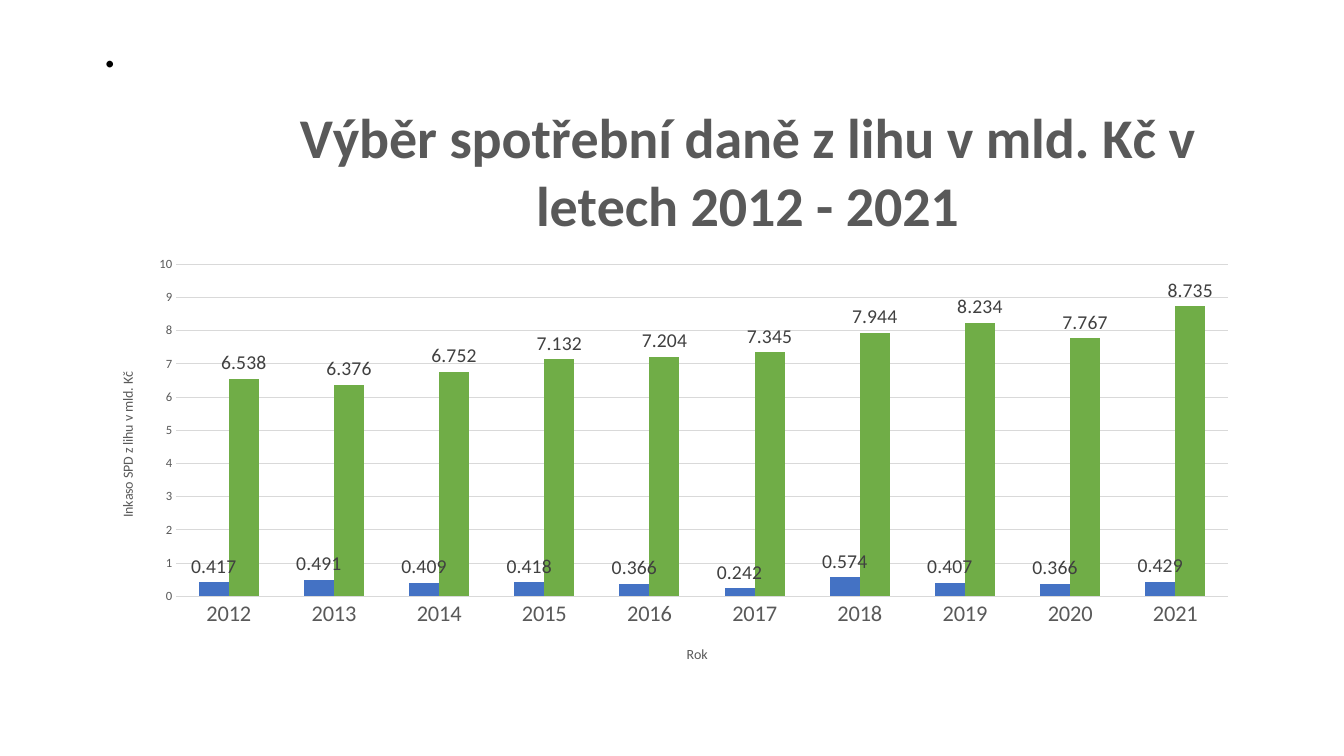
from lxml import etree
from pptx import Presentation
from pptx.chart.data import CategoryChartData
from pptx.dml.color import RGBColor
from pptx.enum.chart import XL_CHART_TYPE, XL_LABEL_POSITION, XL_TICK_MARK
from pptx.enum.text import MSO_ANCHOR, MSO_AUTO_SIZE, PP_ALIGN
from pptx.oxml.ns import qn
from pptx.util import Inches, Pt

BLACK = RGBColor(0x00, 0x00, 0x00)
TEXT_GREY = RGBColor(0x59, 0x59, 0x59)
LABEL_GREY = RGBColor(0x40, 0x40, 0x40)
GRID_GREY = RGBColor(0xD9, 0xD9, 0xD9)
BLUE = RGBColor(0x44, 0x72, 0xC4)
GREEN = RGBColor(0x70, 0xAD, 0x47)
FONT = "Calibri"

YEARS = [str(year) for year in range(2012, 2022)]
SERIES = [
    ("Series 1", BLUE,
     [0.417, 0.491, 0.409, 0.418, 0.366, 0.242, 0.574, 0.407, 0.366, 0.429]),
    ("Series 2", GREEN,
     [6.538, 6.376, 6.752, 7.132, 7.204, 7.345, 7.944, 8.234, 7.767, 8.735]),
]


def set_font(font, size, color, bold=False):
    font.name = FONT
    font.size = Pt(size)
    font.bold = bold
    font.color.rgb = color


def place(element, successors, **settings):
    """Give a chart part a manual layout, in fractions of the chart area."""
    for old in element.findall(qn("c:layout")):
        element.remove(old)
    layout = etree.Element(qn("c:layout"))
    manual = etree.SubElement(layout, qn("c:manualLayout"))
    for name, value in settings.items():
        etree.SubElement(manual, qn(f"c:{name}")).set("val", str(value))
    element.insert_element_before(layout, *successors)


deck = Presentation()
deck.slide_width = Inches(13.33)
deck.slide_height = Inches(7.5)
page = deck.slides.add_slide(deck.slide_layouts[5])

# Slide title
title = page.shapes.title
title.left, title.top = Inches(0.92), Inches(0.4)
title.width, title.height = Inches(11.5), Inches(0.19)
frame = title.text_frame
frame.text = "."
frame.auto_size = MSO_AUTO_SIZE.NONE
frame.vertical_anchor = MSO_ANCHOR.MIDDLE
para = frame.paragraphs[0]
para.alignment = PP_ALIGN.LEFT
para.line_spacing = 0.9
set_font(para.font, 39.6, BLACK)

# Column chart
data = CategoryChartData(number_format="General")
data.categories = YEARS
for name, color, values in SERIES:
    data.add_series(name, values)
chart = page.shapes.add_chart(
    XL_CHART_TYPE.COLUMN_CLUSTERED,
    Inches(0.92), Inches(0.58), Inches(11.5), Inches(6.17), data).chart
set_font(chart.font, 10, BLACK)
chart.has_legend = False
plot = chart.plots[0]
plot.gap_width = 150
plot.overlap = 0
plot.vary_by_categories = False

for series, (name, color, values) in zip(plot.series, SERIES):
    series.format.fill.solid()
    series.format.fill.fore_color.rgb = color
    labels = series.data_labels
    labels.show_value = True
    labels.position = XL_LABEL_POSITION.OUTSIDE_END
    set_font(labels.font, 14, LABEL_GREY)

# Axes
years, amounts = chart.category_axis, chart.value_axis
for axis, size in ((years, 16), (amounts, 9)):
    axis.major_tick_mark = axis.minor_tick_mark = XL_TICK_MARK.NONE
    set_font(axis.tick_labels.font, size, TEXT_GREY)
    axis.format.line.fill.background()
amounts.minimum_scale, amounts.maximum_scale, amounts.major_unit = 0, 10, 1
amounts.has_major_gridlines = True
grid = amounts.major_gridlines.format.line
grid.color.rgb = GRID_GREY
grid.width = Pt(0.75)

# Chart and axis titles
TITLES = [
    (chart, chart.chart_title, "Výběr spotřební daně z lihu v mld. Kč v letech 2012 - 2021",
     40, True, 0.17, 0.05),
    (years, years.axis_title, "Rok", 10, False, 0.51, 0.94),
    (amounts, amounts.axis_title, "Inkaso SPD z lihu v mld. Kč", 10, False, 0.02, 0.5),
]
for owner, heading, text, size, bold, x, y in TITLES:
    heading.text_frame.text = text
    set_font(heading.text_frame.paragraphs[0].font, size, TEXT_GREY, bold)
    element = heading.text_frame._txBody.getparent().getparent()
    place(element, ("c:overlay", "c:spPr", "c:txPr"),
          xMode="edge", yMode="edge", x=x, y=y)
properties = amounts.axis_title.text_frame._txBody.find(qn("a:bodyPr"))
properties.set("rot", "-5400000")
properties.set("vert", "horz")

place(plot._element.getparent(), ("c:barChart",), layoutTarget="inner",
      xMode="edge", yMode="edge", x=0.072, y=0.331, w=0.907, h=0.534)

deck.save("out.pptx")
